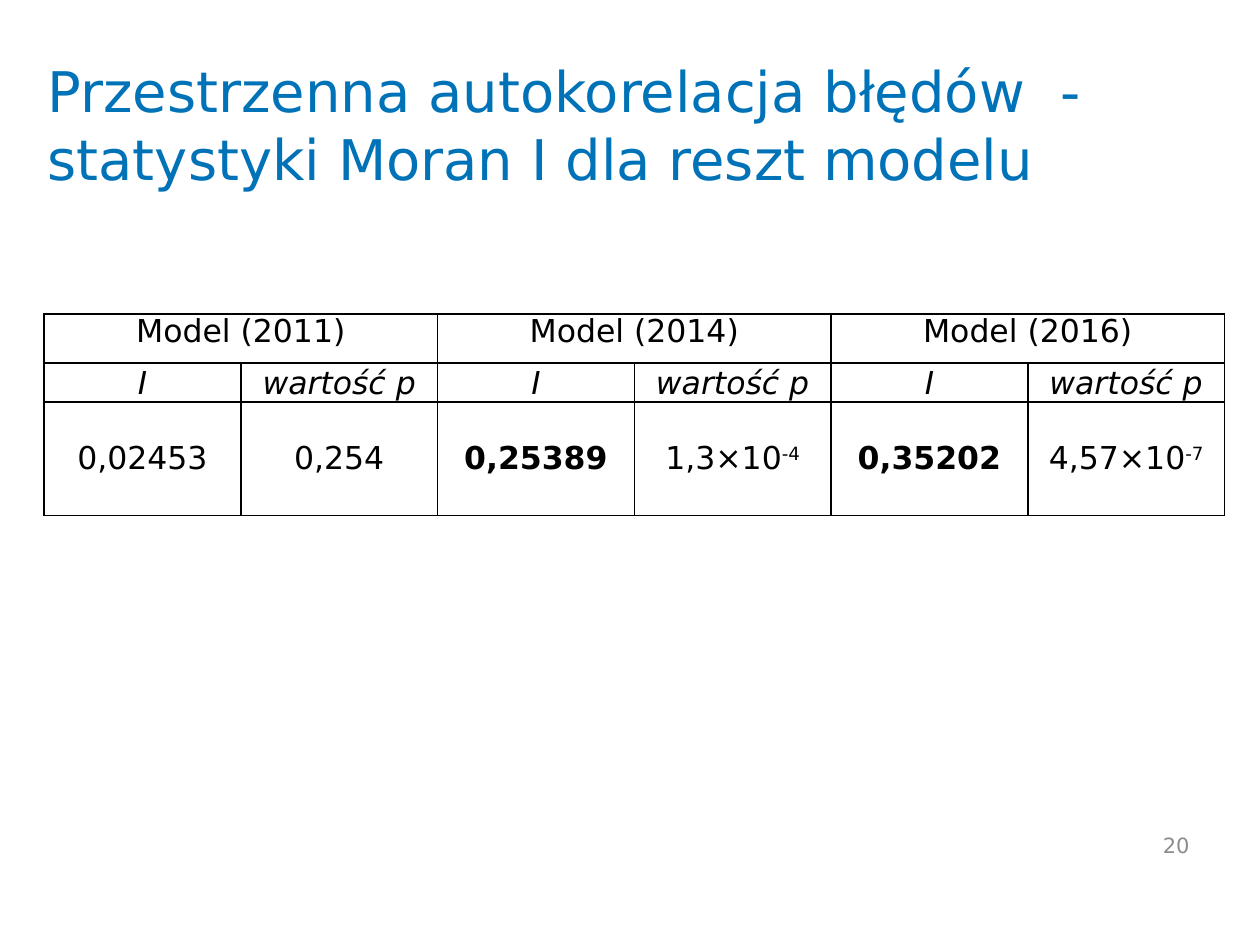
from dataclasses import dataclass

from lxml import etree
from pptx import Presentation
from pptx.dml.color import RGBColor
from pptx.enum.text import MSO_ANCHOR, PP_ALIGN
from pptx.oxml.ns import qn
from pptx.util import Inches, Pt

TOP, MIDDLE, BOTTOM = MSO_ANCHOR.TOP, MSO_ANCHOR.MIDDLE, MSO_ANCHOR.BOTTOM
LEFT, CENTER, RIGHT = PP_ALIGN.LEFT, PP_ALIGN.CENTER, PP_ALIGN.RIGHT

# The slide is a grid of 100 columns by 75 rows
UNIT = Inches(0.1)
COLUMNS, ROWS = 100, 75


@dataclass(frozen=True)
class Theme:
    font: str = "DejaVu Sans"
    title_color: str = "0072B7"
    text_color: str = "000000"
    number_color: str = "8C8C8C"
    border_color: str = "000000"
    title_size: int = 32
    table_size: int = 18
    number_size: int = 12
    border_width: int = 1


@dataclass(frozen=True)
class Box:
    left: float
    top: float
    width: float
    height: float

    def lengths(self):
        return [int(value * UNIT)
                for value in (self.left, self.top, self.width, self.height)]


THEME = Theme()

MODELS = ["Model (2011)", "Model (2014)", "Model (2016)"]
MEASURES = ["I", "wartość p"]
# Value, exponent, bold
RESULTS = [
    ("0,02453", "", False), ("0,254", "", False),
    ("0,25389", "", True), ("1,3×10", "-4", False),
    ("0,35202", "", True), ("4,57×10", "-7", False),
]
ROW_HEIGHTS = [3.9, 3.1, 9]


def write_text(frame, text, *, size, color, align=LEFT, bold=False,
               italic=False, superscript=""):
    paragraph = frame.paragraphs[0]
    paragraph.alignment = align
    for part, baseline in ((text, 0), (superscript, 30000)):
        if not part:
            continue
        run = paragraph.add_run()
        run.text = part
        run.font.name = THEME.font
        run.font.size = Pt(size)
        run.font.bold = bold
        run.font.italic = italic
        run.font.color.rgb = RGBColor.from_string(color)
        if baseline:
            run.font._element.set("baseline", str(baseline))


def add_label(slide, box, text, **text_format):
    frame = slide.shapes.add_textbox(*box.lengths()).text_frame
    frame.word_wrap = True
    frame.vertical_anchor = MIDDLE
    write_text(frame, text, **text_format)


def style_cell(cell):
    cell.margin_left = cell.margin_right = Inches(0.05)
    cell.margin_top = cell.margin_bottom = 0
    properties = cell._tc.get_or_add_tcPr()
    for side in ("a:lnL", "a:lnR", "a:lnT", "a:lnB"):
        line = etree.SubElement(properties, qn(side),
                                w=str(Pt(THEME.border_width)))
        fill = etree.SubElement(line, qn("a:solidFill"))
        etree.SubElement(fill, qn("a:srgbClr"), val=THEME.border_color)
    cell.fill.background()


def fill_cell(cell, text, anchor, **text_format):
    cell.vertical_anchor = anchor
    write_text(cell.text_frame, text, size=THEME.table_size,
               color=THEME.text_color, align=CENTER, **text_format)


def add_title(slide, box):
    add_label(slide, box,
              "Przestrzenna autokorelacja błędów  - statystyki Moran I "
              "dla reszt modelu",
              size=THEME.title_size, color=THEME.title_color)


def add_results_table(slide, box):
    table = slide.shapes.add_table(
        len(ROW_HEIGHTS), len(RESULTS), *box.lengths()).table
    table.first_row = table.horz_banding = False
    for column in table.columns:
        column.width = int(box.width * UNIT / len(RESULTS))
    for row, height in zip(table.rows, ROW_HEIGHTS):
        row.height = int(height * UNIT)
    for cell in table.iter_cells():
        style_cell(cell)

    # Model names span their measures
    span = len(MEASURES)
    for index, model in enumerate(MODELS):
        first = table.cell(0, index * span)
        first.merge(table.cell(0, index * span + span - 1))
        fill_cell(first, model, TOP)

    # Measure names and their values
    for index, (value, exponent, bold) in enumerate(RESULTS):
        fill_cell(table.cell(1, index), MEASURES[index % span], BOTTOM,
                  italic=True)
        fill_cell(table.cell(2, index), value, MIDDLE, bold=bold,
                  superscript=exponent)


def add_page_number(slide, box):
    add_label(slide, box, "20", size=THEME.number_size,
              color=THEME.number_color, align=RIGHT)


def main():
    presentation = Presentation()
    presentation.slide_width = COLUMNS * UNIT
    presentation.slide_height = ROWS * UNIT
    slide = presentation.slides.add_slide(presentation.slide_layouts[6])
    add_title(slide, Box(2.8, 3.6, 90, 12.5))
    add_results_table(slide, Box(3.5, 24.9, 93.7, sum(ROW_HEIGHTS)))
    add_page_number(slide, Box(88.6, 65.1, 6.8, 4))
    presentation.save("out.pptx")


if __name__ == "__main__":
    main()
